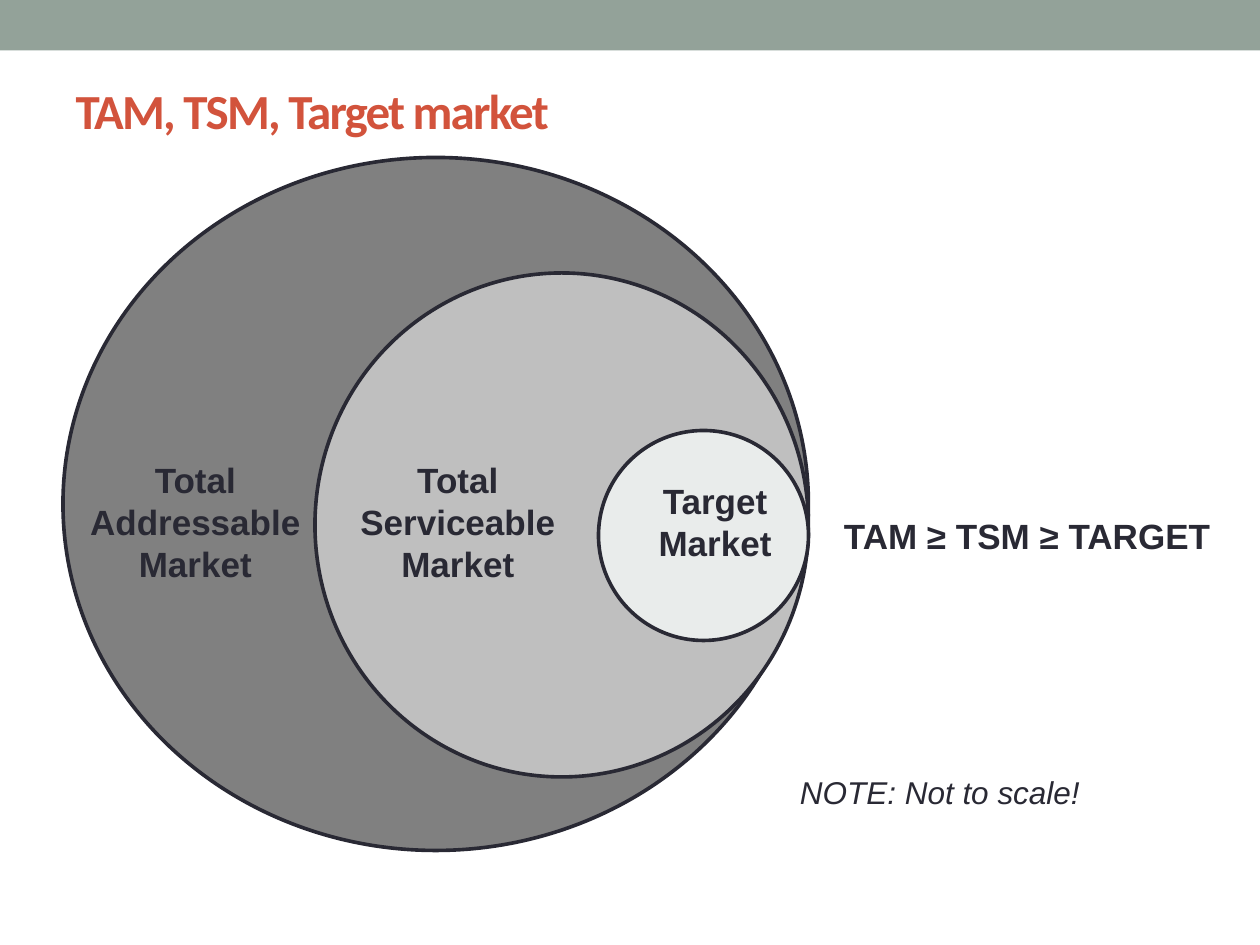
from dataclasses import dataclass
from pptx import Presentation
from pptx.dml.color import RGBColor
from pptx.enum.shapes import MSO_SHAPE
from pptx.enum.text import MSO_ANCHOR, MSO_AUTO_SIZE, PP_ALIGN
from pptx.util import Inches, Pt


@dataclass(frozen=True)
class Theme:
    band: str = "93A299"
    title: str = "D2533C"
    ink: str = "292934"
    total: str = "808080"
    served: str = "BFBFBF"
    target: str = "E9ECEB"
    head: str = "Calibri"
    body: str = "Arial"
    big: int = 28
    label: int = 20
    note: int = 18
    line: float = 2.08


def write(frame, text, font, size, color, bold=False, italic=False,
          align=PP_ALIGN.LEFT, track=0):
    """Fill a text frame, one paragraph per line; track is in points."""
    frame.text = text
    for par in frame.paragraphs:
        par.alignment = align
        for run in par.runs:
            face = run.font
            face.name, face.size = font, Pt(size)
            face.bold, face.italic = bold, italic
            face.color.rgb = RGBColor.from_string(color)
            if track:
                run._r.get_or_add_rPr().set("spc", str(track * 100))


class Deck:
    """Holds the theme and current slide; lengths are cells of a 120 by 90 grid."""

    def __init__(self, theme):
        self.theme = theme
        self.file = Presentation()
        self.file.slide_width, self.file.slide_height = Inches(10), Inches(7.5)
        self.cell = self.file.slide_width / 120
        self.slide = self.file.slides.add_slide(self.file.slide_layouts[5])

    def place(self, *cells):
        return [round(n * self.cell) for n in cells]

    def title(self, text, *box):
        item = self.slide.shapes.title
        item.left, item.top, item.width, item.height = self.place(*box)
        item.text_frame.vertical_anchor = MSO_ANCHOR.MIDDLE
        write(item.text_frame, text, self.theme.head, self.theme.big,
              self.theme.title, bold=True, track=-1)

    def shape(self, kind, fill, *box, line=None):
        item = self.slide.shapes.add_shape(kind, *self.place(*box))
        item.shadow.inherit = False
        item.fill.solid()
        item.fill.fore_color.rgb = RGBColor.from_string(fill)
        if line:
            item.line.color.rgb = RGBColor.from_string(line)
            item.line.width = Pt(self.theme.line)
        else:
            item.line.fill.background()

    def text(self, text, *box, size=None, **style):
        frame = self.slide.shapes.add_textbox(*self.place(*box)).text_frame
        frame.word_wrap = True
        frame.auto_size = MSO_AUTO_SIZE.SHAPE_TO_FIT_TEXT
        write(frame, text, self.theme.body, size or self.theme.label,
              self.theme.ink, **style)


def main():
    theme = Theme()
    deck = Deck(theme)
    deck.shape(MSO_SHAPE.RECTANGLE, theme.band, 0, 0, 120, 4.8)
    deck.title("TAM, TSM, Target market", 6, 7, 108, 7)

    edge = 77  # the ovals touch at their right side
    for fill, top, wide, high in ((theme.total, 15, 71, 66),
                                  (theme.served, 26, 47, 48),
                                  (theme.target, 41, 20, 20)):
        deck.shape(MSO_SHAPE.OVAL, fill, edge - wide, top, wide, high,
                   line=theme.ink)

    for text, left, top, wide, high in (
            ("Total Addressable Market", 7, 43.1, 23.2, 13.3),
            ("Total Serviceable Market", 32.5, 43.1, 22.2, 13.3),
            ("Target\nMarket", 57, 45.1, 22.2, 9.3)):
        deck.text(text, left, top, wide, high, bold=True,
                  align=PP_ALIGN.CENTER)

    deck.text("TAM ≥ TSM ≥ TARGET", 79.2, 48.4, 38.4, 5.3, bold=True)
    deck.text("NOTE: Not to scale!", 75, 73, 32, 5, size=theme.note,
              italic=True)
    deck.file.save("out.pptx")


if __name__ == "__main__":
    main()
